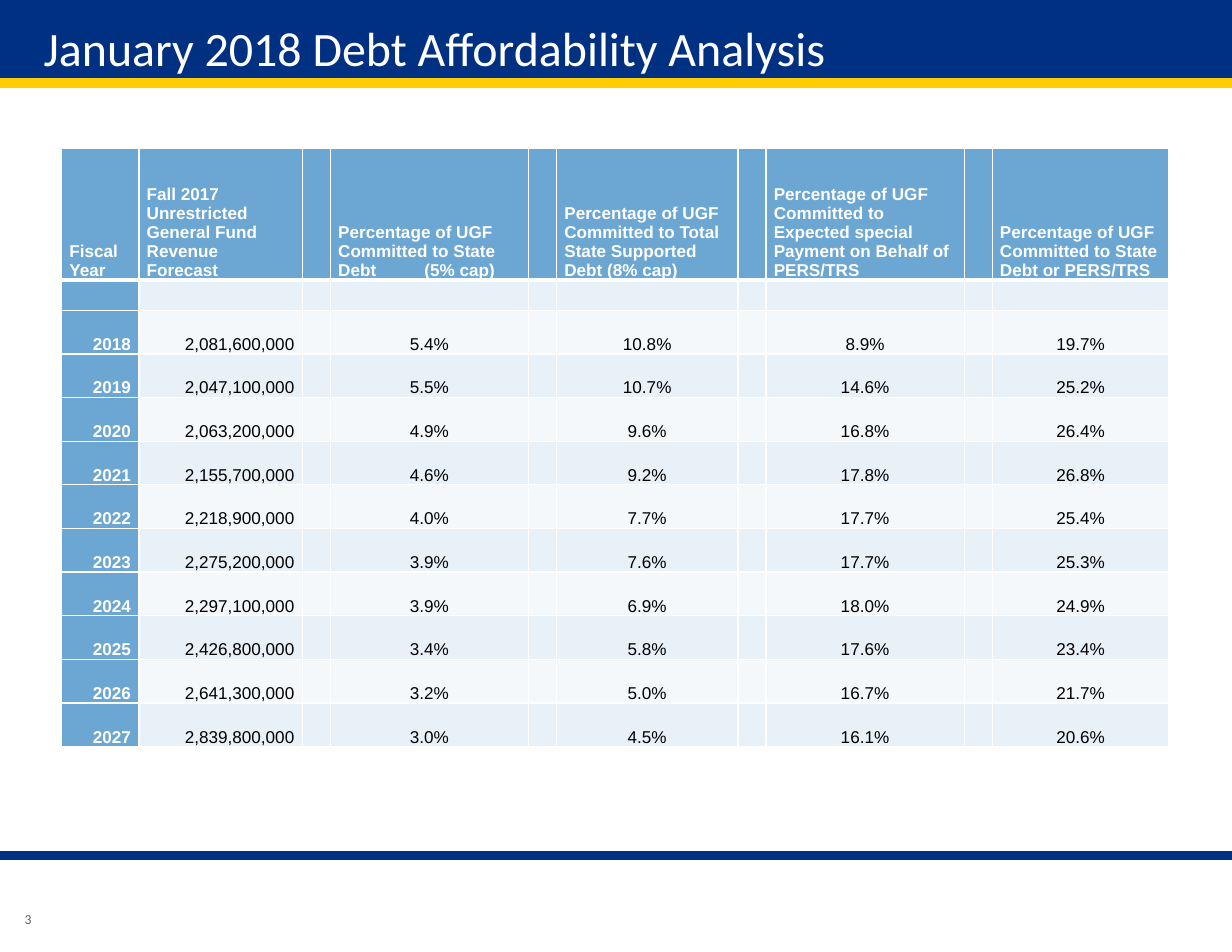
import lxml.etree
import pptx
import pptx.dml.color
import pptx.enum.shapes
import pptx.enum.text
import pptx.oxml.ns
import pptx.util

Inches = pptx.util.Inches
Pt = pptx.util.Pt
Align = pptx.enum.text.PP_ALIGN
Anchor = pptx.enum.text.MSO_ANCHOR
qn = pptx.oxml.ns.qn

WIDTH, HEIGHT = 11, 8.5
NAVY, GOLD, WHITE, BLACK, GREY = "003082", "FFCC00", "FFFFFF", "000000", "5F5F5F"
HEADER_BLUE = "6CA7D4"
BANDS = ["E8F0F8", "F4F8FB"]

TABLE_LEFT, TABLE_TOP = 0.55, 1.32
GAP = 0.25
COLUMN_WIDTHS = [0.69, 1.46, GAP, 1.77, GAP, 1.62, GAP, 1.77, GAP, 1.58]
HEADER_HEIGHT, SPACER_HEIGHT, ROW_HEIGHT = 1.18, 0.27, 0.39
DATA_COLUMNS = [0, 1, 3, 5, 7, 9]
CAP_TAB = 0.77

HEADINGS = [
    "Fiscal Year",
    "Fall 2017 Unrestricted General Fund Revenue Forecast",
    "Percentage of UGF Committed to State Debt\t(5% cap)",
    "Percentage of UGF Committed to Total State Supported Debt (8% cap)",
    "Percentage of UGF Committed to Expected special Payment on Behalf of PERS/TRS",
    "Percentage of UGF Committed to State Debt or PERS/TRS",
]
FORECAST = [
    ("2018", "2,081,600,000", "5.4%", "10.8%", "8.9%", "19.7%"),
    ("2019", "2,047,100,000", "5.5%", "10.7%", "14.6%", "25.2%"),
    ("2020", "2,063,200,000", "4.9%", "9.6%", "16.8%", "26.4%"),
    ("2021", "2,155,700,000", "4.6%", "9.2%", "17.8%", "26.8%"),
    ("2022", "2,218,900,000", "4.0%", "7.7%", "17.7%", "25.4%"),
    ("2023", "2,275,200,000", "3.9%", "7.6%", "17.7%", "25.3%"),
    ("2024", "2,297,100,000", "3.9%", "6.9%", "18.0%", "24.9%"),
    ("2025", "2,426,800,000", "3.4%", "5.8%", "17.6%", "23.4%"),
    ("2026", "2,641,300,000", "3.2%", "5.0%", "16.7%", "21.7%"),
    ("2027", "2,839,800,000", "3.0%", "4.5%", "16.1%", "20.6%"),
]


def color(hex_string):
    return pptx.dml.color.RGBColor.from_string(hex_string)


def add_run(paragraph, text, font_name, size, hex_string, bold=False):
    run = paragraph.add_run()
    run.text = text
    run.font.name = font_name
    run.font.size = Pt(size)
    run.font.bold = bold
    run.font.color.rgb = color(hex_string)


def set_margins(target, horizontal, vertical=0):
    target.margin_left = target.margin_right = Inches(horizontal)
    target.margin_top = target.margin_bottom = Inches(vertical)


def add_header_bar(slide):
    shape = slide.shapes.add_shape(
        pptx.enum.shapes.MSO_SHAPE.RECTANGLE, 0, 0, Inches(WIDTH), Inches(0.76))
    shape.shadow.inherit = False
    shape.fill.solid()
    shape.fill.fore_color.rgb = color(NAVY)
    shape.line.fill.background()


def add_rule(slide, top, hex_string):
    """Draw a horizontal line across the whole slide."""
    rule = slide.shapes.add_connector(
        pptx.enum.shapes.MSO_CONNECTOR.STRAIGHT, 0, Inches(top), Inches(WIDTH), Inches(top))
    rule.line.color.rgb = color(hex_string)
    rule.line.width = Pt(6)
    lxml.etree.SubElement(rule._element.spPr, qn("a:effectLst"))


def set_title(slide, text):
    title = slide.shapes.title
    title.left, title.top = Inches(0.39), Inches(0.15)
    title.width, title.height = Inches(10.23), Inches(0.53)
    frame = title.text_frame
    set_margins(frame, 0)
    frame.vertical_anchor = Anchor.BOTTOM
    frame.auto_size = pptx.enum.text.MSO_AUTO_SIZE.NONE
    paragraph = frame.paragraphs[0]
    paragraph.alignment = Align.LEFT
    add_run(paragraph, text, "Calibri", 30.8, WHITE)
    slide.shapes._spTree.append(title._element)  # in front of the header bar


def add_page_number(slide, text):
    box = slide.shapes.add_textbox(Inches(0.11), Inches(8.08), Inches(0.28), Inches(0.27))
    frame = box.text_frame
    frame.word_wrap = False
    set_margins(frame, 0, 0.05)
    paragraph = frame.paragraphs[0]
    paragraph.alignment = Align.CENTER
    add_run(paragraph, text, "Calibri", 8.8, GREY)


def set_borders(cell, widths):
    """Give white borders, with widths in points for left, right, top, bottom."""
    properties = cell._tc.get_or_add_tcPr()
    for side, width in zip("LRTB", widths):
        line = lxml.etree.SubElement(properties, qn(f"a:ln{side}"), w=str(Pt(width)))
        fill = lxml.etree.SubElement(line, qn("a:solidFill"))
        lxml.etree.SubElement(fill, qn("a:srgbClr"), val=WHITE)


def add_tab_stop(paragraph, position):
    tabs = lxml.etree.SubElement(paragraph._p.get_or_add_pPr(), qn("a:tabLst"))
    lxml.etree.SubElement(tabs, qn("a:tab"), pos=str(Inches(position)), algn="l")


def format_cell(cell, text, row, column):
    is_header = row == 0
    is_label = is_header or column == 0
    set_borders(cell, (1, 1, 3 if row == 1 else 1, 3 if is_header else 1))
    cell.fill.solid()
    cell.fill.fore_color.rgb = color(HEADER_BLUE if is_label else BANDS[(row - 1) % 2])
    set_margins(cell, 0.07)
    cell.vertical_anchor = Anchor.BOTTOM

    paragraph = cell.text_frame.paragraphs[0]
    if not text:
        paragraph._p.get_or_add_endParaRPr().set("sz", "1100")
        return
    if "\t" in text:
        add_tab_stop(paragraph, CAP_TAB)
    if is_header:
        paragraph.alignment = Align.LEFT
    else:
        paragraph.alignment = Align.RIGHT if column < 2 else Align.CENTER
    add_run(paragraph, text, "Arial", 11, WHITE if is_label else BLACK, is_label)


def add_debt_table(slide):
    records = [HEADINGS, [""] * len(HEADINGS), *FORECAST]
    heights = [HEADER_HEIGHT, SPACER_HEIGHT] + [ROW_HEIGHT] * len(FORECAST)
    table = slide.shapes.add_table(
        len(records), len(COLUMN_WIDTHS), Inches(TABLE_LEFT), Inches(TABLE_TOP),
        Inches(sum(COLUMN_WIDTHS)), Inches(sum(heights))).table
    table.horz_banding = False
    for table_column, width in zip(table.columns, COLUMN_WIDTHS):
        table_column.width = Inches(width)
    for row, (record, height) in enumerate(zip(records, heights)):
        table.rows[row].height = Inches(height)
        texts = dict(zip(DATA_COLUMNS, record))
        for column in range(len(COLUMN_WIDTHS)):
            format_cell(table.cell(row, column), texts.get(column, ""), row, column)


def main():
    presentation = pptx.Presentation()
    presentation.slide_width = Inches(WIDTH)
    presentation.slide_height = Inches(HEIGHT)
    slide = presentation.slides.add_slide(presentation.slide_layouts[5])
    add_header_bar(slide)
    add_rule(slide, 0.74, GOLD)
    add_rule(slide, 7.64, NAVY)
    add_page_number(slide, "3")
    set_title(slide, "January 2018 Debt Affordability Analysis")
    add_debt_table(slide)
    presentation.save("out.pptx")


if __name__ == "__main__":
    main()
